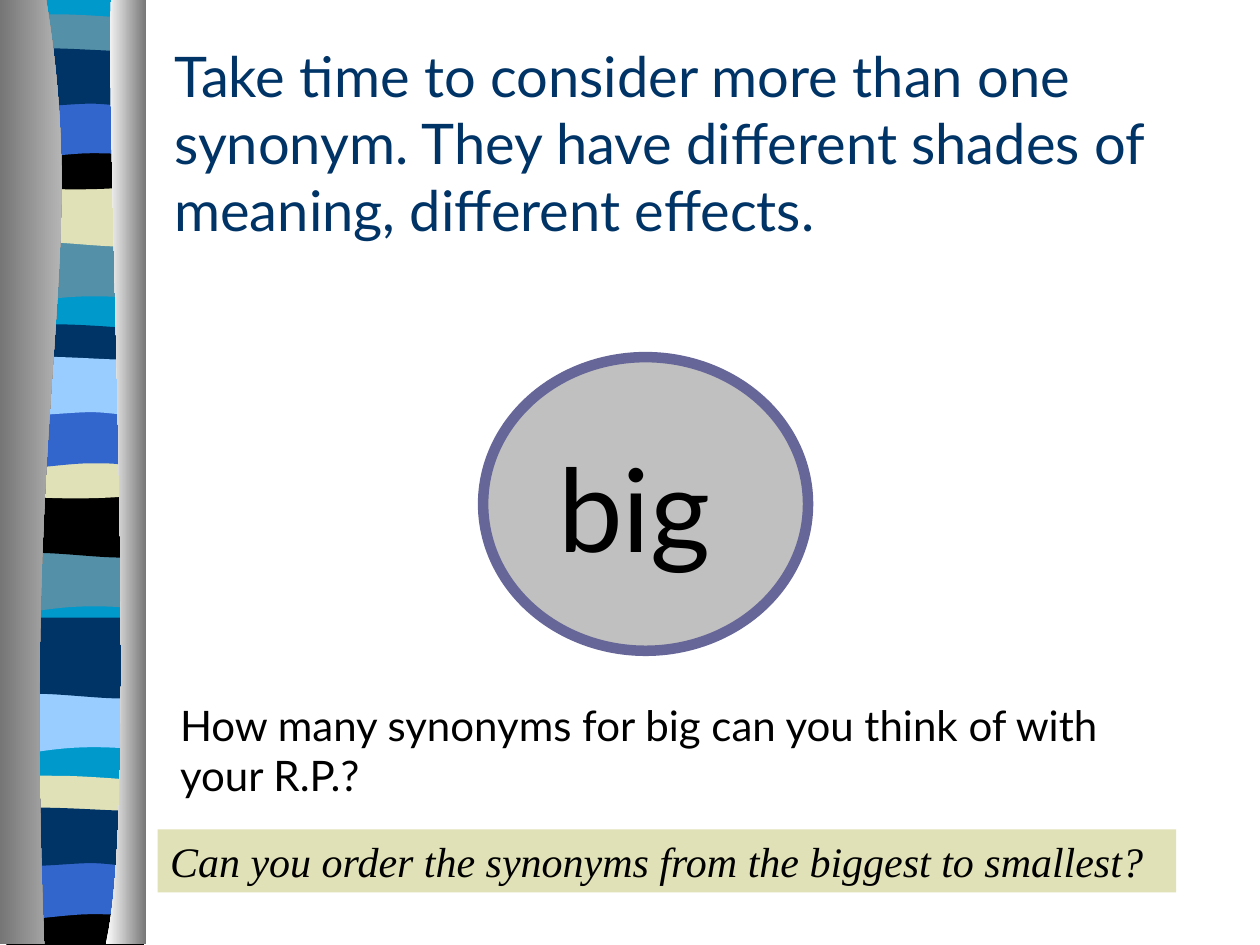
from pptx import Presentation
from pptx.dml.color import RGBColor
from pptx.enum.shapes import MSO_SHAPE
from pptx.enum.text import MSO_ANCHOR, PP_ALIGN
from pptx.oxml.ns import qn
from pptx.util import Cm, Pt

OVAL, RECTANGLE = MSO_SHAPE.OVAL, MSO_SHAPE.RECTANGLE
LEFT = PP_ALIGN.LEFT
TOP, MIDDLE = MSO_ANCHOR.TOP, MSO_ANCHOR.MIDDLE

NAVY = RGBColor(0x00, 0x33, 0x66)
BLUE = RGBColor(0x33, 0x66, 0xCC)
SKY = RGBColor(0x99, 0xCC, 0xFF)
CYAN = RGBColor(0x00, 0x99, 0xCC)
TEAL = RGBColor(0x54, 0x90, 0xA8)
CREAM = RGBColor(0xE1, 0xE1, 0xB7)
PURPLE = RGBColor(0x66, 0x66, 0x99)
SILVER = RGBColor(0xC0, 0xC0, 0xC0)
LIGHT_GRAY = RGBColor(0xD3, 0xD3, 0xD3)
DARK_GRAY = RGBColor(0x76, 0x76, 0x76)
BLACK = RGBColor(0x00, 0x00, 0x00)
WHITE = RGBColor(0xFF, 0xFF, 0xFF)

# Content: text, box in cm (left, top, width, height), anchor, font
TITLE = ("Take time to consider more than one synonym. They have different "
         "shades of meaning, different effects.",
         (3.26, 1.27, 21.59, 3.18), MIDDLE,
         {"name": "Lato", "size": Pt(32)}, NAVY)
WORD = ("big", (11, 8.69, 4.01, 3.05), TOP,
        {"name": "Lato", "size": Pt(66)}, BLACK)
QUESTION = ("How many synonyms for big can you think of with your R.P.?",
            (3.38, 13.97, 20.32, 2.29), TOP,
            {"name": "Lato", "size": Pt(24)}, BLACK)
CHALLENGE = ("Can you order the synonyms from the biggest to smallest?",
             (3.18, 16.72, 20.53, 1.27), TOP,
             {"name": "Times New Roman", "size": Pt(24), "italic": True}, BLACK)
CIRCLE_BOX = (9.74, 7.2, 6.55, 5.92)

# Ribbon band outlines in cm, as Bezier chains relative to the band's top:
# lower edge from right to left, upper edge from left to right
START, END = 0.13, 2.9
SPREAD = 0.14  # each edge reaches this far outwards
FLAT = [(START, -0.08), (END, -0.08)]
BAND_EDGES = {
    "sag": ([(END, 1.19), (0.99, 0.99), (0.61, 1.4), (START, 1.19)], FLAT),
    "swell": ([(END, 1.21), (2.44, 1.4), (0.99, 1.07), (START, 1.21)], FLAT),
    "cap": ([(END, 0.61), (2.44, 0.71), (0.61, 0.71), (START, 0.61)],
            [(START, 0), (0.33, -0.13), (0.74, -0.1), (1.19, -0.1),
             (1.65, -0.1), (2.54, -0.03), (END, 0)]),
    "dip": ([(END, 0.84), (2.44, 0.97), (0.61, 0.97), (START, 0.84)],
            [(START, 0), (1.83, 0.13), (2.31, 0), (END, 0)]),
    "arch": ([(END, 1.2), (2.46, 1.07), (2.29, 1.07), (1.83, 1.07),
              (1.37, 1.07), (0.56, 1.2), (START, 1.2)], FLAT),
    "roll": ([(END, 0.78), (2.72, 0.91), (2.29, 0.78), (1.83, 0.78),
              (1.37, 0.78), (0.43, 0.91), (START, 0.78)],
             [(START, 0), (0.53, -0.13), (2.01, 0), (2.46, 0),
              (2.92, 0), (2.82, 0), (END, 0)]),
}
# Each stretch of ribbon repeats the six bands: top in cm and colour
STRETCHES = [
    [(4.7, TEAL), (3.56, CREAM), (0.53, TEAL),
     (2.74, BLACK), (1.88, BLUE), (1.17, NAVY)],
    [(10.95, TEAL), (9.83, BLACK), (6.78, NAVY),
     (8.97, CREAM), (8.13, BLUE), (7.39, SKY)],
    [(13.79, SKY), (12.67, NAVY), (15.88, CREAM),
     (18.08, BLACK), (17.22, BLUE), (16.48, NAVY)],
]
# Pillars: curved inner edge, straight outer x, gradient from left to right
PILLARS = [
    ([(0.93, 0), (1.83, 5.49), (0.43, 7.52), (0.89, 19.03)], 0,
     (DARK_GRAY, LIGHT_GRAY)),
    ([(2.24, 0), (2.13, 3.18), (2.82, 16.41), (2.13, 19.03)], 2.95,
     (WHITE, DARK_GRAY)),
]


def add_outline(*chains):
    """Draw a closed outline of Bezier chains joined by straight lines."""
    corners = [(Cm(x), Cm(y)) for chain in chains for x, y in chain]
    builder = slide.shapes.build_freeform(*corners[0])
    builder.add_line_segments(corners[1:], close=True)
    shape = builder.convert_to_shape()
    shape.shadow.inherit = False
    shape.line.fill.background()

    # Merge each three lines within a chain into one curve
    outline = shape.element.find(".//" + qn("a:path"))
    segments = list(outline)
    offset = 0
    for chain in chains:
        for index in range(offset + 1, offset + len(chain) - 2, 3):
            curve, *others = segments[index:index + 3]
            curve.tag = qn("a:cubicBezTo")
            for other in others:
                curve.append(other[0])
                outline.remove(other)
        offset += len(chain)
    return shape


def shift(chain, distance):
    return [(x, y + distance) for x, y in chain]


def add_filled(kind, box, color):
    shape = slide.shapes.add_shape(kind, *map(Cm, box))
    shape.shadow.inherit = False
    shape.fill.solid()
    shape.fill.fore_color.rgb = color
    shape.line.fill.background()
    return shape


def write(shape, text, box, anchor, font, color):
    shape.left, shape.top, shape.width, shape.height = map(Cm, box)
    frame = shape.text_frame
    frame.word_wrap = True
    frame.vertical_anchor = anchor
    paragraph = frame.paragraphs[0]
    paragraph.alignment = LEFT
    run = paragraph.add_run()
    run.text = text
    for name, value in font.items():
        setattr(run.font, name, value)
    run.font.color.rgb = color


presentation = Presentation()
presentation.slide_width, presentation.slide_height = Cm(25.4), Cm(19.05)
slide = presentation.slides.add_slide(presentation.slide_layouts[5])

# Striped ribbon
add_filled(RECTANGLE, (0.15, 0, 2.74, 18.97), CYAN)
for stretch in STRETCHES:
    for (lower, upper), (top, color) in zip(BAND_EDGES.values(), stretch):
        band = add_outline(shift(lower, top + SPREAD),
                           shift(upper, top - SPREAD))
        band.fill.solid()
        band.fill.fore_color.rgb = color

# Pillars on both sides of the ribbon
for curve, outer, colors in PILLARS:
    pillar = add_outline(curve, [(outer, curve[-1][1]), (outer, 0)])
    pillar.fill.gradient()
    pillar.fill.gradient_angle = 0
    for stop, color in zip(pillar.fill.gradient_stops, colors):
        stop.color.rgb = color

# Title, circled word, question and challenge
write(slide.shapes.title, *TITLE)
circle = add_filled(OVAL, CIRCLE_BOX, SILVER)
circle.line.color.rgb = PURPLE
circle.line.width = Pt(6)
for content in (WORD, QUESTION):
    write(slide.shapes.add_textbox(*map(Cm, content[1])), *content)
write(add_filled(RECTANGLE, CHALLENGE[1], CREAM), *CHALLENGE)

presentation.save("out.pptx")
